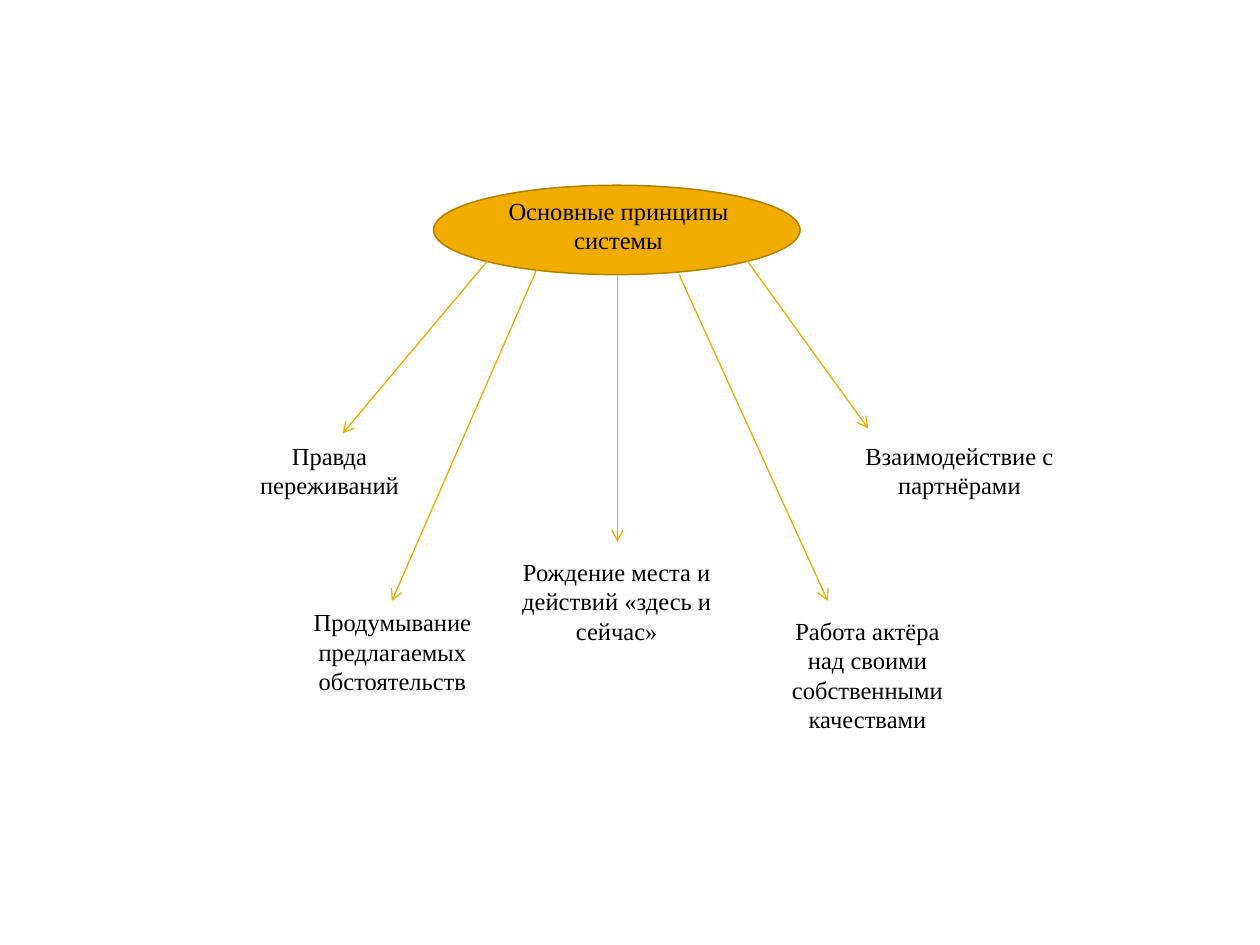
from collections import namedtuple

from lxml.etree import SubElement
from pptx import Presentation
from pptx.dml.color import RGBColor
from pptx.enum.shapes import MSO_CONNECTOR, MSO_SHAPE
from pptx.enum.text import MSO_AUTO_SIZE, PP_ALIGN
from pptx.oxml.ns import qn
from pptx.util import Inches, Pt

COLUMNS, ROWS = 100, 75
GOLD, DARK_GOLD, BLACK = "F0AD00", "B28000", "000000"

Box = namedtuple("Box", "left top width height")

HUB_TEXT = "Основные принципы системы"

# Label, its box, arrow start and arrow end, in grid cells from the diagram's corner
PRINCIPLES = [
    ("Правда переживаний", Box(0, 19.8, 16.5, 5.7), (20.8, 6), (9.3, 19.7)),
    ("Продумывание предлагаемых обстоятельств", Box(2.6, 33, 21.3, 8.1), (25, 6), (13.2, 33)),
    ("Рождение места и действий «здесь и сейчас»", Box(22, 29, 18.1, 8.1), (31.1, 7.1), (31.1, 28.3)),
    ("Работа актёра над своими собственными качествами", Box(42.7, 33.7, 16.5, 10.4), (36, 7.1), (47.8, 33)),
    ("Взаимодействие с партнёрами", Box(49.2, 19.8, 18.1, 5.7), (41.4, 6), (51, 19.3)),
]

deck = Presentation()
deck.slide_width, deck.slide_height = Inches(10), Inches(7.5)


def cells(x, y):
    return int(deck.slide_width * x / COLUMNS), int(deck.slide_height * y / ROWS)


def inside(area, box):
    """Position and size of a box that is measured from the area's corner."""
    return *cells(area.left + box.left, area.top + box.top), *cells(box.width, box.height)


def color(value):
    return RGBColor.from_string(value)


def add_text(page, place, text, size=14, font="Times New Roman", fill=BLACK, align=PP_ALIGN.CENTER):
    frame = page.shapes.add_textbox(*place).text_frame
    frame.word_wrap = True
    frame.auto_size = MSO_AUTO_SIZE.SHAPE_TO_FIT_TEXT
    para = frame.paragraphs[0]
    para.alignment = align
    span = para.add_run()
    span.text = text
    span.font.size, span.font.name = Pt(size), font
    span.font.color.rgb = color(fill)


def add_arrow(page, start, end):
    arrow = page.shapes.add_connector(MSO_CONNECTOR.STRAIGHT, *start, *end)
    arrow.line.width = Pt(0.75)
    arrow.line.color.rgb = color(GOLD)
    SubElement(arrow.line._get_or_add_ln(), qn("a:tailEnd"), type="arrow")
    SubElement(arrow._element.spPr, qn("a:effectLst"))


def add_hub(page, area):
    ellipse = page.shapes.add_shape(MSO_SHAPE.OVAL, *inside(area, Box(0, 0, area.width, area.height)))
    ellipse.shadow.inherit = False
    ellipse.fill.solid()
    ellipse.fill.fore_color.rgb = color(GOLD)
    ellipse.line.color.rgb = color(DARK_GOLD)
    ellipse.line.width = Pt(0.85)
    label = Box(area.width * 0.15, area.height * 0.05, area.width * 0.71, area.height * 0.8)
    add_text(page, inside(area, label), HUB_TEXT)


def add_principles(page, area):
    for label, box, start, end in PRINCIPLES:
        points = [cells(area.left + x, area.top + y) for x, y in (start, end)]
        add_arrow(page, *points)
        add_text(page, inside(area, box), label)


def main():
    page = deck.slides.add_slide(deck.slide_layouts[6])
    diagram = Box(17.9, 14.7, 67.3, 44.1)
    add_hub(page, Box(diagram.left + 16.5, diagram.top, 29.1, 7.1))
    add_principles(page, diagram)
    deck.save("out.pptx")


if __name__ == "__main__":
    main()
